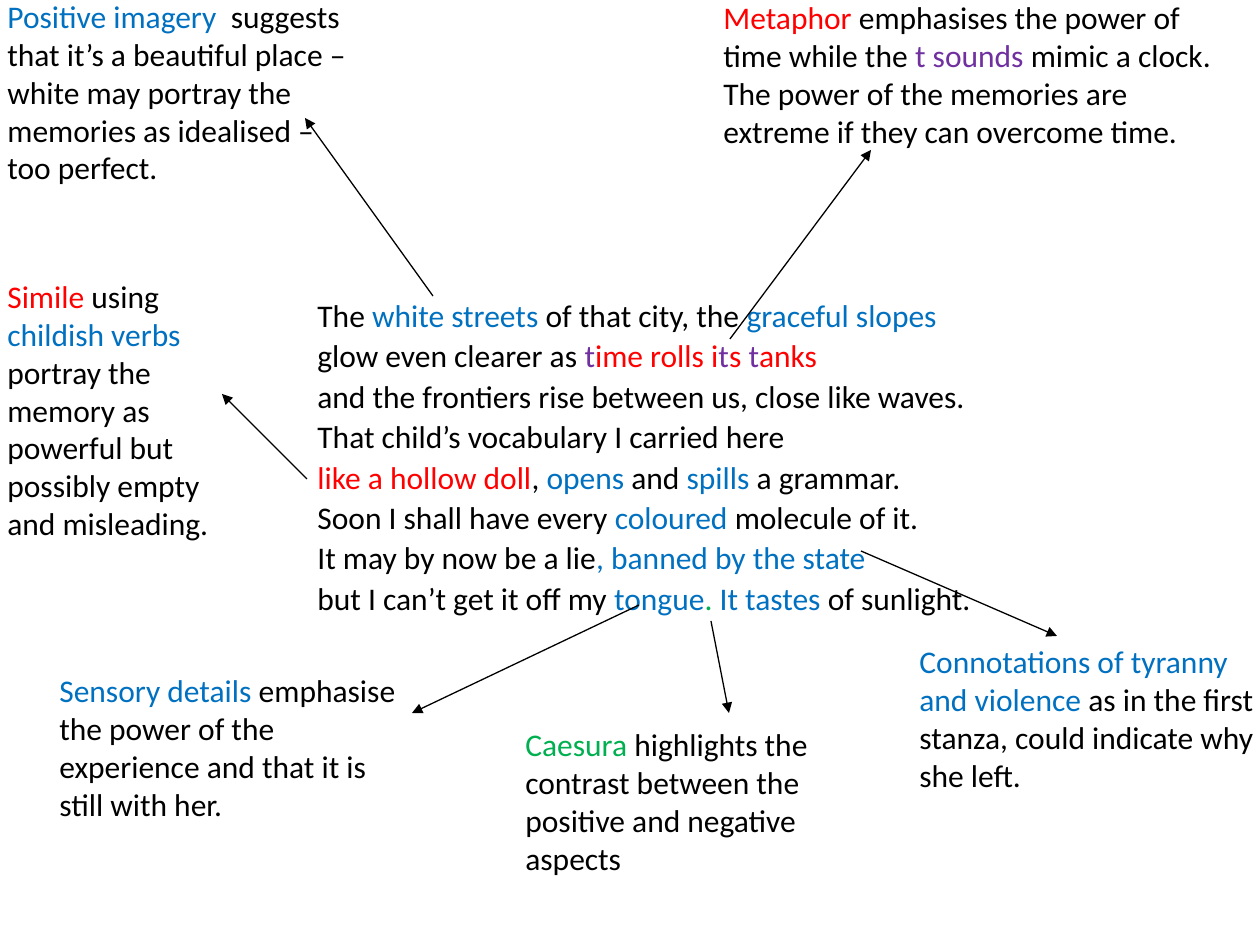
from dataclasses import dataclass

import lxml.etree
import pptx
import pptx.dml.color
import pptx.enum.shapes
import pptx.enum.text
import pptx.oxml.ns
import pptx.util


@dataclass(frozen=True)
class Theme:
    font: str = "Calibri"
    size: int = 18
    line_width: float = 0.75
    black: str = "000000"
    blue: str = "0070C0"
    red: str = "FF0000"
    purple: str = "7030A0"
    green: str = "00B050"


class Annotator:
    """Holds the theme and the current page."""

    EMU_PER_PX = 914400 / 126

    def __init__(self, theme, page):
        self.theme = theme
        self.page = page

    @classmethod
    def emu(cls, *lengths):
        return [pptx.util.Emu(round(px * cls.EMU_PER_PX)) for px in lengths]

    def colour(self, name):
        return pptx.dml.color.RGBColor.from_string(getattr(self.theme, name))

    def text(self, place, lines, line_spacing=None, space_after=None):
        """One paragraph; each line is a list of (colour, words) spans."""
        box = self.page.shapes.add_textbox(*self.emu(*place))
        frame = box.text_frame
        frame.word_wrap = True
        frame.auto_size = pptx.enum.text.MSO_AUTO_SIZE.SHAPE_TO_FIT_TEXT
        para = frame.paragraphs[0]
        para.line_spacing = line_spacing
        if space_after is not None:
            para.space_after = pptx.util.Pt(space_after)
        for number, line in enumerate(lines):
            if number:
                para.add_line_break()
            for name, words in line:
                span = para.add_run()
                span.text = words
                span.font.name = self.theme.font
                span.font.size = pptx.util.Pt(self.theme.size)
                span.font.color.rgb = self.colour(name)

    def arrow(self, *ends):
        line = self.page.shapes.add_connector(
            pptx.enum.shapes.MSO_CONNECTOR.STRAIGHT, *self.emu(*ends))
        line.line.color.rgb = self.colour("black")
        line.line.width = pptx.util.Pt(self.theme.line_width)
        qn = pptx.oxml.ns.qn
        properties = line._element.spPr
        lxml.etree.SubElement(properties.find(qn("a:ln")), qn("a:tailEnd"), type="triangle")
        lxml.etree.SubElement(properties, qn("a:effectLst"))


POEM = [
    [("black", "The "), ("blue", "white streets "), ("black", "of that city, the "),
     ("blue", "graceful slopes")],
    [("black", "glow even clearer as "), ("purple", "t"), ("red", "ime rolls i"),
     ("purple", "t"), ("red", "s "), ("purple", "t"), ("red", "anks")],
    [("black", "and the frontiers rise between us, close like waves.")],
    [("black", "That child’s vocabulary I carried here")],
    [("red", "like a hollow doll"), ("black", ", "), ("blue", "opens"),
     ("black", " and "), ("blue", "spills "), ("black", "a grammar.")],
    [("black", "Soon I shall have every "), ("blue", "coloured"),
     ("black", " molecule of it.")],
    [("black", "It may by now be a lie"), ("blue", ", banned by the state")],
    [("black", "but I can’t get it off my "), ("blue", "tongue"), ("green", "."),
     ("blue", " It tastes "), ("black", "of sunlight.")],
]

# Place (left, top, width, height) and spans of each comment
NOTES = [
    ((-5, -9, 374, 204), [
        ("blue", "Positive imagery  "),
        ("black", "suggests that it’s a beautiful place – white may portray "
                  "the memories as idealised – too perfect.")]),
    ((711, -8, 514, 165), [
        ("red", "Metaphor "),
        ("black", "emphasises the power of time while the "),
        ("purple", "t sounds "),
        ("black", "mimic a clock. The power of the memories are extreme "
                  "if they can overcome time.")]),
    ((-5, 271, 228, 280), [
        ("red", "Simile "), ("black", "using "), ("blue", "childish verbs "),
        ("black", "portray the memory as powerful but possibly empty "
                  "and misleading.")]),
    ((907, 636, 374, 165), [
        ("blue", "Connotations of tyranny and violence "),
        ("black", "as in the first stanza, could indicate why she left.")]),
    ((513, 719, 315, 165), [
        ("green", "Caesura "),
        ("black", "highlights the contrast between the positive and "
                  "negative aspects")]),
    ((47, 665, 374, 165), [
        ("blue", "Sensory details "),
        ("black", "emphasise the power of the experience and that it is "
                  "still with her.")]),
]

# From the poem to its comment: x, y, x, y
ARROWS = [
    (433, 296, 305, 118),
    (307, 479, 222, 394),
    (730, 339, 871, 150),
    (639, 605, 412, 713),
    (861, 551, 1057, 636),
    (711, 621, 729, 713),
]


def main():
    deck = pptx.Presentation()
    deck.slide_width, deck.slide_height = Annotator.emu(1260, 945)
    page = deck.slides.add_slide(deck.slide_layouts[6])
    annotator = Annotator(Theme(), page)

    # Poem in the middle
    annotator.text((305, 287, 751, 339), POEM, line_spacing=1.07, space_after=8)

    # Arrows out to the comments
    for ends in ARROWS:
        annotator.arrow(*ends)

    # Comments around the poem
    for place, spans in NOTES:
        annotator.text(place, [spans])

    deck.save("out.pptx")


if __name__ == "__main__":
    main()
